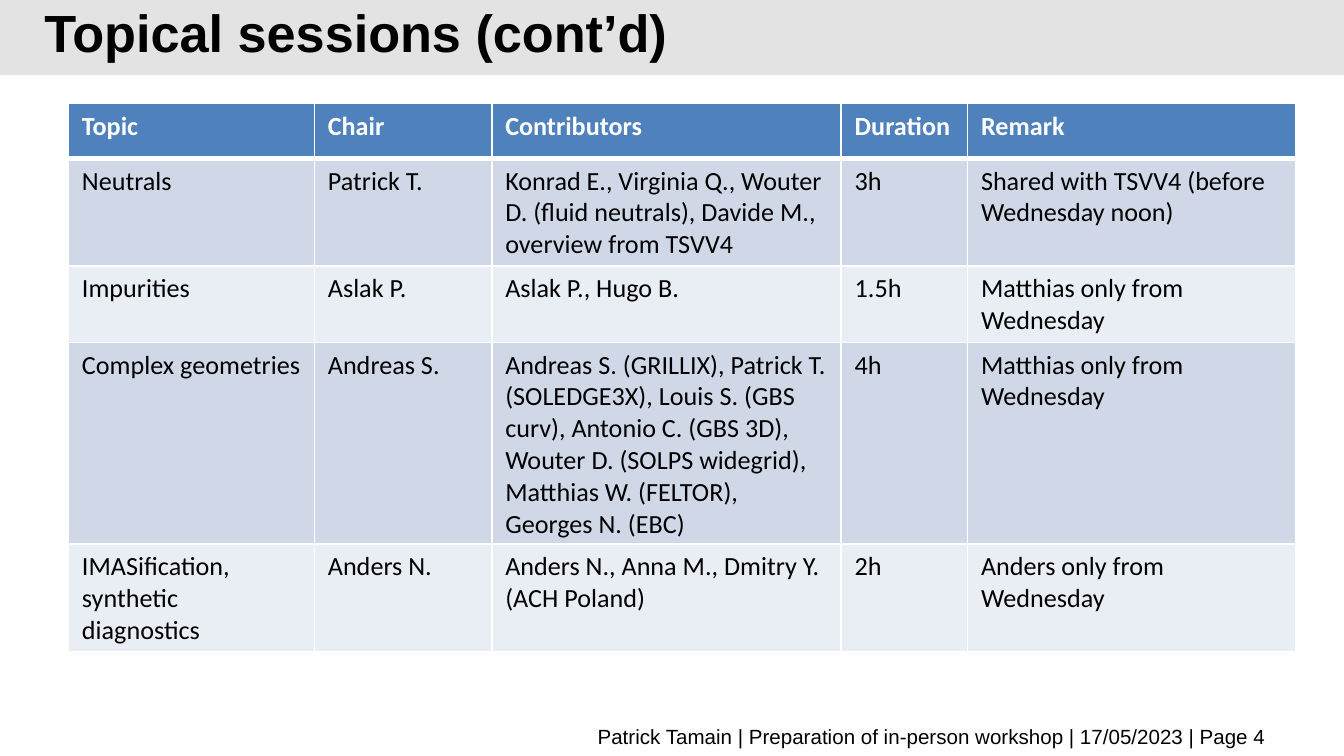
from lxml import etree
from pptx import Presentation
from pptx.dml.color import RGBColor
from pptx.enum import shapes, text
from pptx.oxml.ns import qn
from pptx.util import Inches, Pt

BLACK = RGBColor(0x00, 0x00, 0x00)
WHITE = RGBColor(0xFF, 0xFF, 0xFF)
GREY = RGBColor(0xE3, 0xE3, 0xE3)
BLUE = RGBColor(0x4F, 0x81, 0xBD)
BANDS = [RGBColor(0xD0, 0xD8, 0xE8), RGBColor(0xE9, 0xED, 0xF4)]

WIDTHS = [1.83, 1.32, 2.6, 0.94, 2.44]
ROW = 0.41
SESSIONS = [
    ["Topic", "Chair", "Contributors", "Duration", "Remark"],
    ["Neutrals", "Patrick T.",
     "Konrad E., Virginia Q., Wouter D. (fluid neutrals), Davide M., "
     "overview from TSVV4",
     "3h", "Shared with TSVV4 (before Wednesday noon)"],
    ["Impurities", "Aslak P.", "Aslak P., Hugo B.", "1.5h",
     "Matthias only from Wednesday"],
    ["Complex geometries", "Andreas S.",
     "Andreas S. (GRILLIX), Patrick T. (SOLEDGE3X), Louis S. (GBS curv), "
     "Antonio C. (GBS 3D), Wouter D. (SOLPS widegrid), "
     "Matthias W. (FELTOR), Georges N. (EBC)",
     "4h", "Matthias only from Wednesday"],
    ["IMASification, synthetic diagnostics", "Anders N.",
     "Anders N., Anna M., Dmitry Y. (ACH Poland)", "2h",
     "Anders only from Wednesday"],
]


def write(frame, words, size=14, font="Calibri", color=BLACK, bold=False,
          align=text.PP_ALIGN.LEFT, anchor=text.MSO_ANCHOR.MIDDLE, line=None):
    frame.word_wrap = True
    frame.vertical_anchor = anchor
    para = frame.paragraphs[0]
    para.alignment = align
    if line:
        para.line_spacing = Pt(line)
    run = para.add_run()
    run.text = words
    run.font.size = Pt(size)
    run.font.name = font
    run.font.bold = bold
    run.font.color.rgb = color


def add_title(slide, words):
    """Fill the title placeholder and put the grey band behind it."""
    title = slide.shapes.title
    title.left, title.top = Inches(0.23), Inches(0.06)
    title.width, title.height = Inches(8.63), Inches(0.38)
    write(title.text_frame, words, size=28, font="Arial", bold=True, line=32)
    band = slide.shapes.add_shape(shapes.MSO_SHAPE.RECTANGLE, 0, 0,
                                  Inches(10), Inches(0.56))
    band.shadow.inherit = False
    band.fill.solid()
    band.fill.fore_color.rgb = GREY
    band.line.fill.background()
    title.element.addprevious(band.element)


def add_footer(slide, words):
    box = slide.shapes.add_textbox(Inches(0.51), Inches(5.37),
                                   Inches(9.01), Inches(0.22))
    write(box.text_frame, words, size=11, font="Arial",
          align=text.PP_ALIGN.RIGHT)


def set_borders(cell, **widths):
    """Draw white borders; cell properties need them ahead of the fill."""
    props = cell._tc.get_or_add_tcPr()
    for spot, (side, width) in enumerate(widths.items()):
        edge = etree.Element(qn(f"a:ln{side}"), w=str(Pt(width)))
        fill = etree.SubElement(edge, qn("a:solidFill"))
        etree.SubElement(fill, qn("a:srgbClr"), val=str(WHITE))
        props.insert(spot, edge)


def add_sessions(slide, rows):
    """Add the table; its frame is taller than the rows, which grow to fit."""
    frame = slide.shapes.add_table(
        len(rows), len(WIDTHS), Inches(0.51), Inches(0.77),
        Inches(sum(WIDTHS)), Inches(ROW * len(rows)))
    table = frame.table
    for col, width in zip(table.columns, WIDTHS):
        col.width = Inches(width)
    for r, row in enumerate(rows):
        table.rows[r].height = Inches(ROW)
        head = r == 0
        for c, words in enumerate(row):
            cell = table.cell(r, c)
            cell.fill.solid()
            cell.fill.fore_color.rgb = BLUE if head else BANDS[(r - 1) % 2]
            set_borders(cell, L=1, R=1, T=3 if r == 1 else 1,
                        B=3 if head else 1)
            write(cell.text_frame, words, color=WHITE if head else BLACK,
                  bold=head, anchor=text.MSO_ANCHOR.TOP)
    frame.height = Inches(4.07)


def main():
    deck = Presentation()
    deck.slide_width = Inches(10)
    deck.slide_height = deck.slide_width * 9 // 16
    slide = deck.slides.add_slide(deck.slide_layouts[5])
    add_title(slide, "Topical sessions (cont’d)")
    add_footer(slide, "Patrick Tamain | Preparation of in-person workshop"
                      " | 17/05/2023 | Page 4")
    add_sessions(slide, SESSIONS)
    deck.save("out.pptx")


if __name__ == "__main__":
    main()
